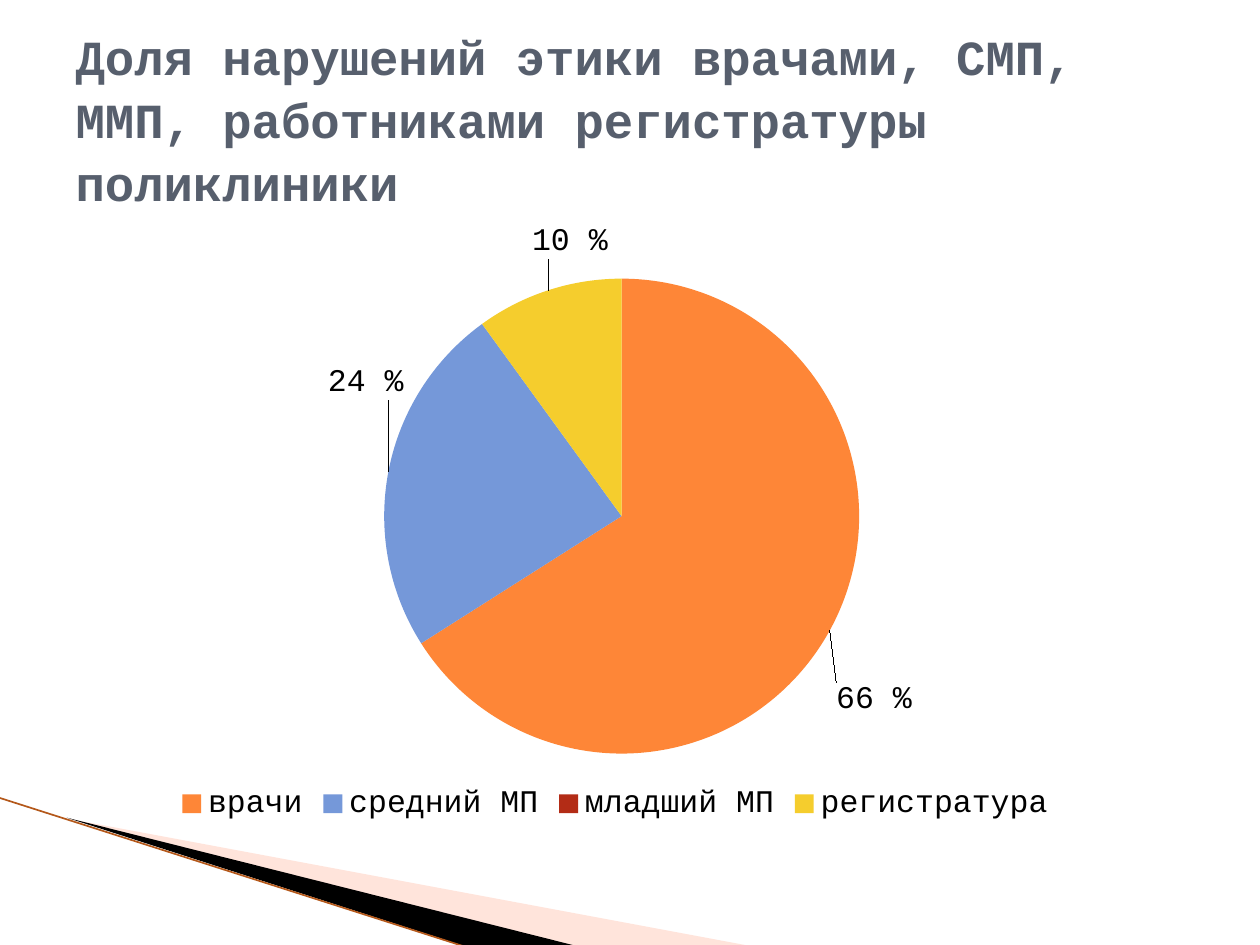
from lxml.etree import SubElement
from pptx import Presentation
from pptx.chart.data import CategoryChartData
from pptx.dml.color import RGBColor
from pptx.enum.chart import XL_CHART_TYPE, XL_LABEL_POSITION, XL_LEGEND_POSITION
from pptx.enum.shapes import MSO_CONNECTOR
from pptx.enum.text import MSO_ANCHOR, PP_ALIGN
from pptx.oxml import parse_xml
from pptx.oxml.ns import nsdecls, qn
from pptx.util import Pt

FONT = "Courier New"
BLACK = RGBColor(0x00, 0x00, 0x00)
SLATE = RGBColor(0x57, 0x5F, 0x6D)
PEACH = RGBColor(0xFF, 0xBC, 0xA5)
BROWN = RGBColor(0xB4, 0x58, 0x1A)
ORANGE = RGBColor(0xFE, 0x86, 0x37)
BLUE = RGBColor(0x75, 0x98, 0xD9)
RED = RGBColor(0xB3, 0x2C, 0x16)
YELLOW = RGBColor(0xF5, 0xCD, 0x2D)


def manual_layout(**values):
    """Return a c:layout element holding the given manual layout settings."""
    settings = "".join(f'<c:{name} val="{value}"/>' for name, value in values.items())
    return parse_xml(
        f'<c:layout {nsdecls("c")}><c:manualLayout>{settings}</c:manualLayout></c:layout>'
    )


deck = Presentation()
deck.slide_width, deck.slide_height = Pt(720), Pt(540)
page = deck.slides.add_slide(deck.slide_layouts[5])

# Corner wedges and edge line
wedges = [
    ([(39.6, 468), (428.4, 540.5), (328.3, 540.5)], PEACH),
    ([(38.2, 467.3), (329, 540.5), (267.8, 541.4)], BLACK),
]
for points, color in wedges:
    start, *others = [(Pt(x), Pt(y)) for x, y in points]
    outline = page.shapes.build_freeform(*start)
    outline.add_line_segments(others, close=True)
    wedge = outline.convert_to_shape()
    wedge.shadow.inherit = False
    wedge.fill.solid()
    wedge.fill.fore_color.rgb = color
    wedge.line.fill.background()
    if color == PEACH:
        tint = wedge.fill._xPr.find(".//" + qn("a:srgbClr"))
        SubElement(tint, qn("a:alpha"), val="40000")

edge = page.shapes.add_connector(
    MSO_CONNECTOR.STRAIGHT, Pt(-0.7), Pt(455.8), Pt(267.1), Pt(541.4)
)
edge.line.color.rgb = BROWN
edge.line.width = Pt(0.95)
SubElement(edge._element.spPr, qn("a:effectLst"))

# Title
title = page.shapes.title
title.left, title.top, title.width, title.height = Pt(36), Pt(21.6), Pt(648), Pt(90)
frame = title.text_frame
frame.text = "Доля нарушений этики врачами, СМП, ММП, работниками регистратуры поликлиники"
frame.word_wrap = True
frame.vertical_anchor = MSO_ANCHOR.MIDDLE
para = frame.paragraphs[0]
para.alignment = PP_ALIGN.LEFT
para.line_spacing = 1.07
para.font.name = FONT
para.font.size = Pt(28)
para.font.bold = True
para.font.color.rgb = SLATE

# Pie chart: category, value, colour, label shift as a fraction of the chart
slices = [
    ("врачи", 66, ORANGE, (0, 0.08)),
    ("средний МП", 24, BLUE, (0.02, -0.115)),
    ("младший МП", 0, RED, None),
    ("регистратура", 10, YELLOW, (0.055, -0.04)),
]
data = CategoryChartData(number_format='0" %"')
data.categories = [name for name, *_ in slices]
data.add_series("Series 1", [value for _, value, *_ in slices])
chart = page.shapes.add_chart(
    XL_CHART_TYPE.PIE, Pt(31), Pt(128.2), Pt(640.8), Pt(344.9), data
).chart
chart.has_title = False
chart.font.name = FONT
chart.font.size = Pt(18)
chart.font.color.rgb = BLACK
chart.has_legend = True
chart.legend.position = XL_LEGEND_POSITION.BOTTOM
chart.legend.include_in_layout = False

plot = chart.plots[0]
plot.vary_by_categories = True
plot_area = plot._element.getparent()
for layout in plot_area.findall(qn("c:layout")):
    plot_area.remove(layout)
plot_area.insert(0, manual_layout(
    layoutTarget="inner", xMode="edge", yMode="edge", x=0.294, y=0.09, w=0.424, h=0.787
))

series = plot.series[0]
labels = series.data_labels
labels.show_value = True
labels.show_percentage = False
labels.show_legend_key = False
labels.number_format = '0" %"'
labels.number_format_is_linked = False
labels.position = XL_LABEL_POSITION.OUTSIDE_END
leader = labels._element.find(qn("c:showLeaderLines"))
if leader is None:
    leader = SubElement(labels._element, qn("c:showLeaderLines"))
leader.set("val", "1")

for index, (name, value, color, shift) in enumerate(slices):
    point = series.points[index]
    point.format.fill.solid()
    point.format.fill.fore_color.rgb = color
    point.format.line.fill.background()
    point.data_label.position = XL_LABEL_POSITION.OUTSIDE_END
    label = labels._element.findall(qn("c:dLbl"))[index]
    if shift:
        label.insert(1, manual_layout(x=shift[0], y=shift[1]))
    else:
        for child in list(label)[1:]:
            label.remove(child)
        SubElement(label, qn("c:delete"), val="1")

deck.save("out.pptx")
